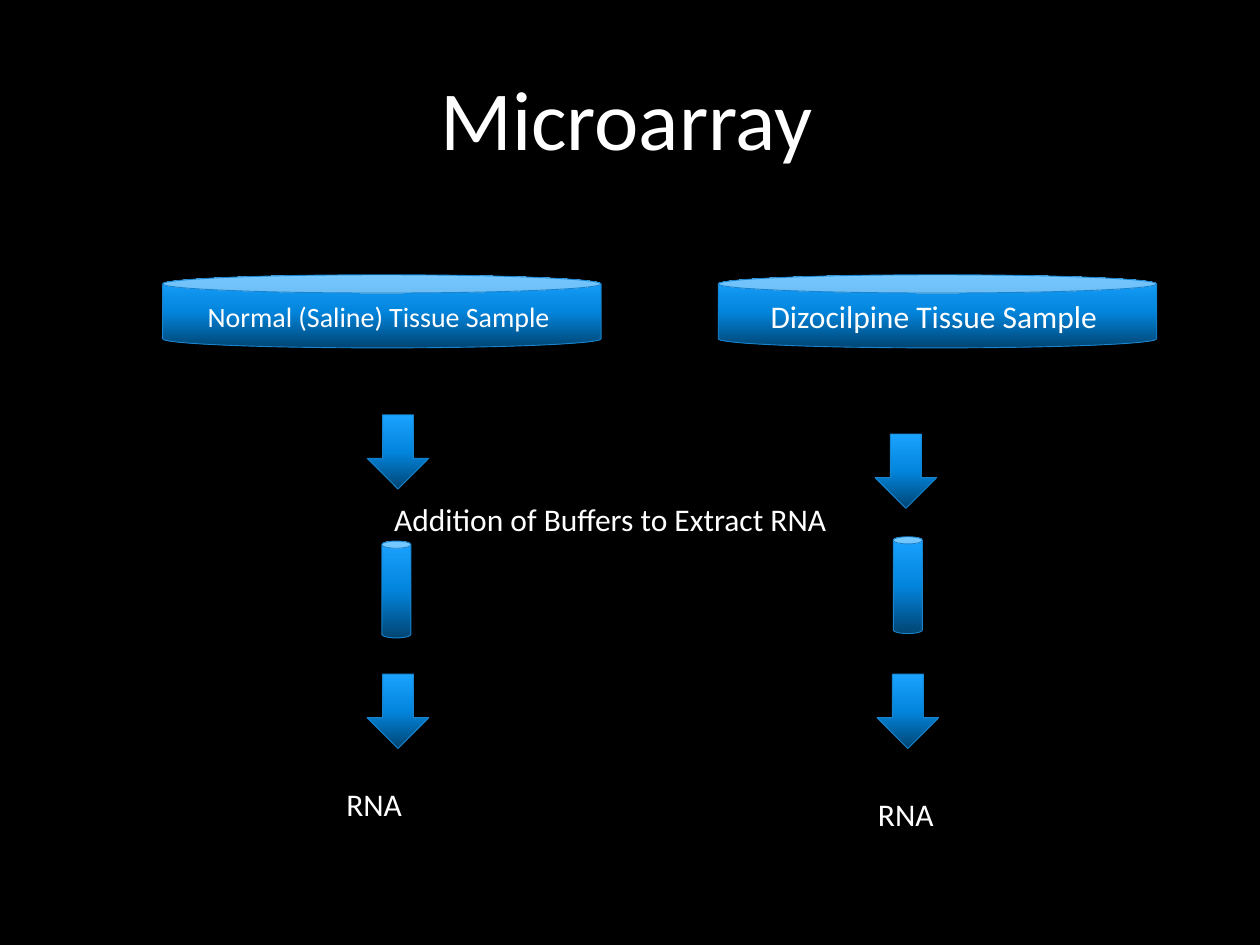
from copy import deepcopy
from dataclasses import dataclass

from pptx import Presentation
from pptx.dml.color import RGBColor
from pptx.enum.shapes import MSO_SHAPE as Preset
from pptx.enum.text import MSO_ANCHOR as Anchor, MSO_AUTO_SIZE as AutoSize, PP_ALIGN as Align
from pptx.oxml.ns import qn
from pptx.shapes.base import BaseShape
from pptx.slide import Slide
from pptx.util import Pt

BLACK = RGBColor(0x00, 0x00, 0x00)
WHITE = RGBColor(0xFF, 0xFF, 0xFF)
OUTLINE = RGBColor(0x18, 0x84, 0xCD)
GRADIENT = (
    (0.0, RGBColor(0x01, 0x45, 0x73)),
    (0.5, RGBColor(0x02, 0x85, 0xDD)),
    (1.0, RGBColor(0x1A, 0xA3, 0xFF)),
)
FONT = "Calibri"


@dataclass(frozen=True)
class Item:
    left: float
    top: float
    width: float
    height: float
    text: str = ""
    size: float = 18

    def box(self) -> tuple[Pt, ...]:
        return tuple(Pt(v) for v in (self.left, self.top, self.width, self.height))


TITLE = Item(57.6, 10.8, 612, 112.3, "Microarray ", 48)

DISH = (250.6, 41.8)
TUBE = (16.6, 55.4)
ARROW = (35.3, 42.5)
LABEL = (56.2, 28.8)

CANS = (
    Item(92.9, 157, *DISH, "Normal (Saline) Tissue Sample ", 16),
    Item(410.4, 157, *DISH, "Dizocilpine Tissue Sample "),
    Item(218.2, 309.2, *TUBE),
    Item(510.5, 306.7, *TUBE),
)
ARROWS = (
    Item(209.8, 237, *ARROW),
    Item(209.8, 385.2, *ARROW),
    Item(500, 248, *ARROW),
    Item(501.1, 385.2, *ARROW),
)
LABELS = (
    Item(190.8, 445, *LABEL, "RNA"),
    Item(494.6, 450.7, *LABEL, "RNA"),
    Item(218.2, 282.2, 290.9, 28.8, "Addition of Buffers to Extract RNA"),
)


def write_text(shape: BaseShape, item: Item, align: Align, **frame_format) -> None:
    frame = shape.text_frame
    for name, value in frame_format.items():
        setattr(frame, name, value)
    paragraph = frame.paragraphs[0]
    paragraph.alignment = align
    run = paragraph.add_run()
    run.text = item.text
    run.font.color.rgb = WHITE
    for name, value in {"name": FONT, "size": Pt(item.size)}.items():
        setattr(run.font, name, value)


def fill_gradient(shape: BaseShape) -> None:
    """Fill from dark at the bottom to light at the top."""
    shape.fill.gradient()
    shape.fill.gradient_angle = 90
    stop_list = shape.fill._xPr.find(qn("a:gradFill")).find(qn("a:gsLst"))
    stop_list.append(deepcopy(stop_list[0]))
    for stop, (position, color) in zip(shape.fill.gradient_stops, GRADIENT):
        stop.position = position
        stop.color.rgb = color


def add_block(slide: Slide, preset: Preset, item: Item) -> None:
    shape = slide.shapes.add_shape(preset, *item.box())
    shape.shadow.inherit = False
    fill_gradient(shape)
    shape.line.color.rgb = OUTLINE
    shape.line.width = Pt(0.5)
    if item.text:
        write_text(shape, item, Align.CENTER, vertical_anchor=Anchor.MIDDLE, word_wrap=True)


def add_text(slide: Slide, item: Item, align: Align, **frame_format) -> None:
    write_text(slide.shapes.add_textbox(*item.box()), item, align, **frame_format)


def main() -> None:
    presentation = Presentation()
    presentation.slide_width, presentation.slide_height = Pt(720), Pt(540)
    slide = presentation.slides.add_slide(presentation.slide_layouts[6])
    slide.background.fill.solid()
    slide.background.fill.fore_color.rgb = BLACK

    add_text(slide, TITLE, Align.CENTER, vertical_anchor=Anchor.MIDDLE, word_wrap=True)
    for preset, items in ((Preset.CAN, CANS), (Preset.DOWN_ARROW, ARROWS)):
        for item in items:
            add_block(slide, preset, item)
    for label in LABELS:
        add_text(slide, label, Align.LEFT, word_wrap=False, auto_size=AutoSize.SHAPE_TO_FIT_TEXT)

    presentation.save("out.pptx")


if __name__ == "__main__":
    main()
